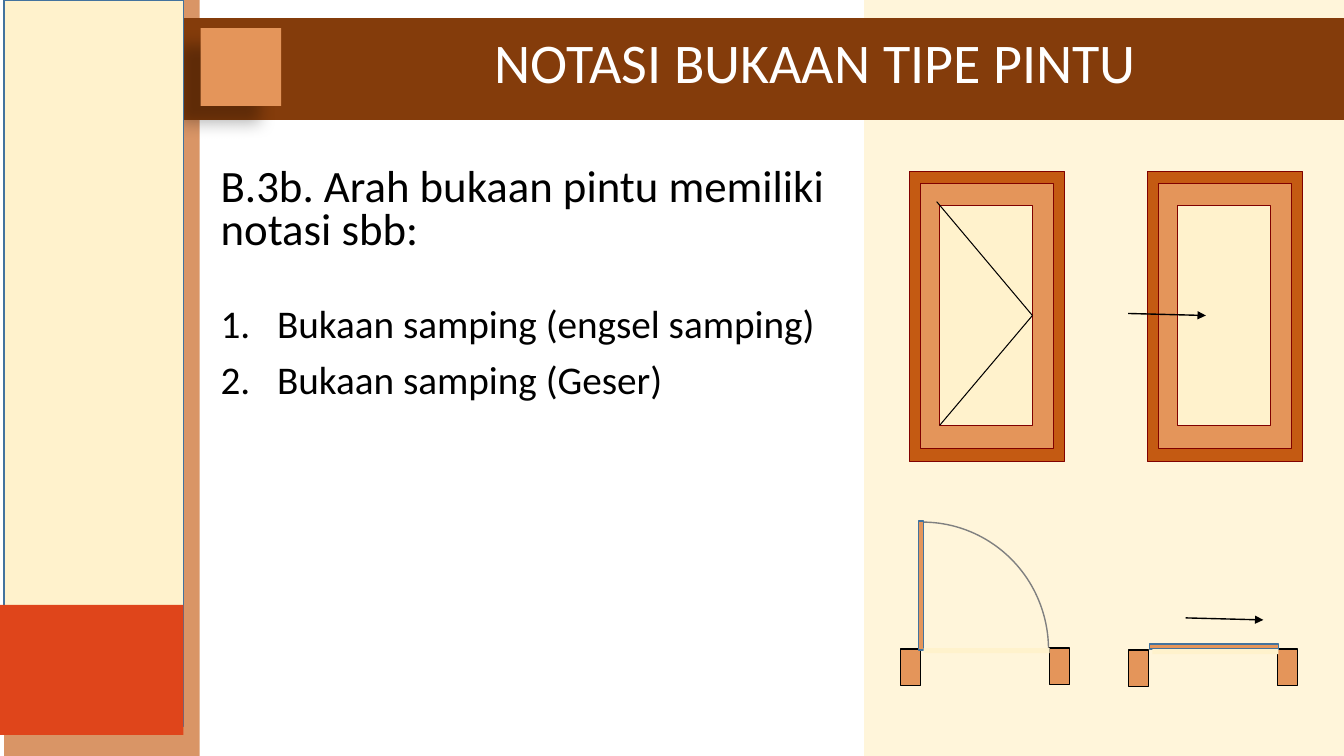
from lxml.etree import SubElement
from pptx import Presentation
from pptx.dml.color import RGBColor
from pptx.enum.shapes import MSO_CONNECTOR, MSO_SHAPE
from pptx.enum.text import MSO_ANCHOR, PP_ALIGN
from pptx.oxml.ns import qn
from pptx.util import Inches, Pt

SIZE = (13.33, 7.5)
TITLE = "NOTASI BUKAAN TIPE PINTU"
HEAD = "B.3b. Arah bukaan pintu memiliki notasi sbb:"
ITEMS = ["Bukaan samping (engsel samping)", "Bukaan samping (Geser)"]

CREAM, TAN, BROWN, MAROON, BLUE, BLACK = (
    "FFF2CC", "E4955A", "C45A12", "800000", "43739E", "000000")
SQUARE = (1.99, 0.28, 0.8, 0.77)
PANELS = [
    ((8.57, 0, 4.76, 7.5), CREAM, None, 72),
    ((0.04, 0, 1.94, 7.5), "C55A11", None, 64),
    ((1.75, 0.18, 11.58, 1.01), "843C0B", None, 100),
    (SQUARE, TAN, None, 100),
    ((0.04, 0, 1.78, 7.21), CREAM, BLUE, 100),
    ((0, 6, 1.82, 1.29), "DF451B", None, 100),
]
DOORS = [(9.02, 1.7), (11.38, 1.7)]
LAYERS = [
    ((0, 0, 1.54, 2.88), BROWN),
    ((0.11, 0.12, 1.32, 2.63), TAN),
    ((0.3, 0.34, 0.92, 2.18), CREAM),
]
SWING = [(9.29, 2), (9.32, 4.22)]
SWEEP = (7.9, 5.18, 2.5, 2.53)
PLANS = [
    (8.93, 6.44, (9.11, 5.17, 0.05, 1.28), (9.16, 6.43, 1.25, 0.05)),
    (11.19, 6.45, (11.4, 6.39, 1.28, 0.05), (11.43, 6.44, 1.25, 0.05)),
]
POST = (0.2, 0.36)
SPAN = 1.48
ARROWS = [((11.19, 3.11), (11.96, 3.13)), ((11.76, 6.13), (12.53, 6.15))]


def tint(code):
    return RGBColor.from_string(code)


def scale(nums):
    return [Inches(n) for n in nums]


def apply(obj, form):
    for key, val in form.items():
        setattr(obj, key, val)


def shape(box, fill, line=None, alpha=100, kind=MSO_SHAPE.RECTANGLE):
    item = slide.shapes.add_shape(kind, *scale(box))
    item.shadow.inherit = False
    if fill:
        item.fill.solid()
        item.fill.fore_color.rgb = tint(fill)
        if alpha < 100:
            clr = item.fill._xPr.find(qn("a:solidFill"))[0]
            SubElement(clr, qn("a:alpha"), val=str(alpha * 1000))
    else:
        item.fill.background()
    if line:
        item.line.color.rgb = tint(line)
        item.line.width = Pt(1)
    else:
        item.line.fill.background()
    return item


def shade(item):
    group = item._element.spPr.find(qn("a:effectLst"))
    cast = SubElement(group, qn("a:outerShdw"), blurRad=str(Pt(11.8)),
                      dist=str(Pt(19.7)), dir=str(141 * 60000),
                      algn="ctr", rotWithShape="0")
    clr = SubElement(cast, qn("a:srgbClr"), val=BLACK)
    SubElement(clr, qn("a:alpha"), val="28000")


def rule(start, end, width=1, arrow=False):
    item = slide.shapes.add_connector(
        MSO_CONNECTOR.STRAIGHT, *scale(start + end))
    item.line.color.rgb = tint(BLACK)
    item.line.width = Pt(width)
    if arrow:
        SubElement(item.line._get_or_add_ln(), qn("a:tailEnd"), type="triangle")
    SubElement(item._element.spPr, qn("a:effectLst"))
    return item


def text(box, lines, size, color, form, anchor=MSO_ANCHOR.TOP, listed=False):
    frame = slide.shapes.add_textbox(*scale(box)).text_frame
    apply(frame, {"word_wrap": True, "vertical_anchor": anchor})
    for n, line in enumerate(lines):
        para = frame.add_paragraph() if n else frame.paragraphs[0]
        para.text = line
        apply(para, form)
        if n:
            para.space_before = Pt(10)
        if listed:
            props = para._p.get_or_add_pPr()
            props.set("marL", str(Inches(0.56)))
            props.set("indent", str(Inches(-0.56)))
            SubElement(props, qn("a:buFont"), typeface="+mj-lt")
            SubElement(props, qn("a:buAutoNum"), type="arabicPeriod")
        apply(para.font, {"size": Pt(size), "name": "Calibri"})
        para.font.color.rgb = tint(color)


deck = Presentation()
deck.slide_width, deck.slide_height = scale(SIZE)
slide = deck.slides.add_slide(deck.slide_layouts[6])

for box, fill, line, alpha in PANELS:
    panel = shape(box, fill, line, alpha)
    if box == SQUARE:
        shade(panel)

text((2.84, 0.28, 10.49, 0.73), [TITLE], 40, "FFFFFF",
     {"alignment": PP_ALIGN.CENTER, "line_spacing": 0.9}, MSO_ANCHOR.MIDDLE)
text((2.09, 1.62, 6.53, 0.96), [HEAD], 32, BLACK, {"line_spacing": 0.8})
text((2.09, 2.97, 6.14, 3.24), ITEMS, 28, BLACK, {"line_spacing": 0.9},
     listed=True)

panes = []
for left, top in DOORS:
    for (dx, dy, wide, high), fill in LAYERS:
        pane = shape((left + dx, top + dy, wide, high), fill, MAROON)
    panes.append(pane)

for start in SWING:
    rule(start, (10.24, 3.13), 0.75).end_connect(panes[0], 3)

shape(SWEEP, None, "808080", kind=MSO_SHAPE.ARC)
for left, top, leaf, sill in PLANS:
    shape((left, top, *POST), TAN, BLACK)
    shape((left + SPAN, top - 0.01, *POST), TAN, BLACK)
    shape(leaf, TAN, BLUE)
    shape(sill, CREAM)

for start, end in ARROWS:
    rule(start, end, arrow=True)

deck.save("out.pptx")
